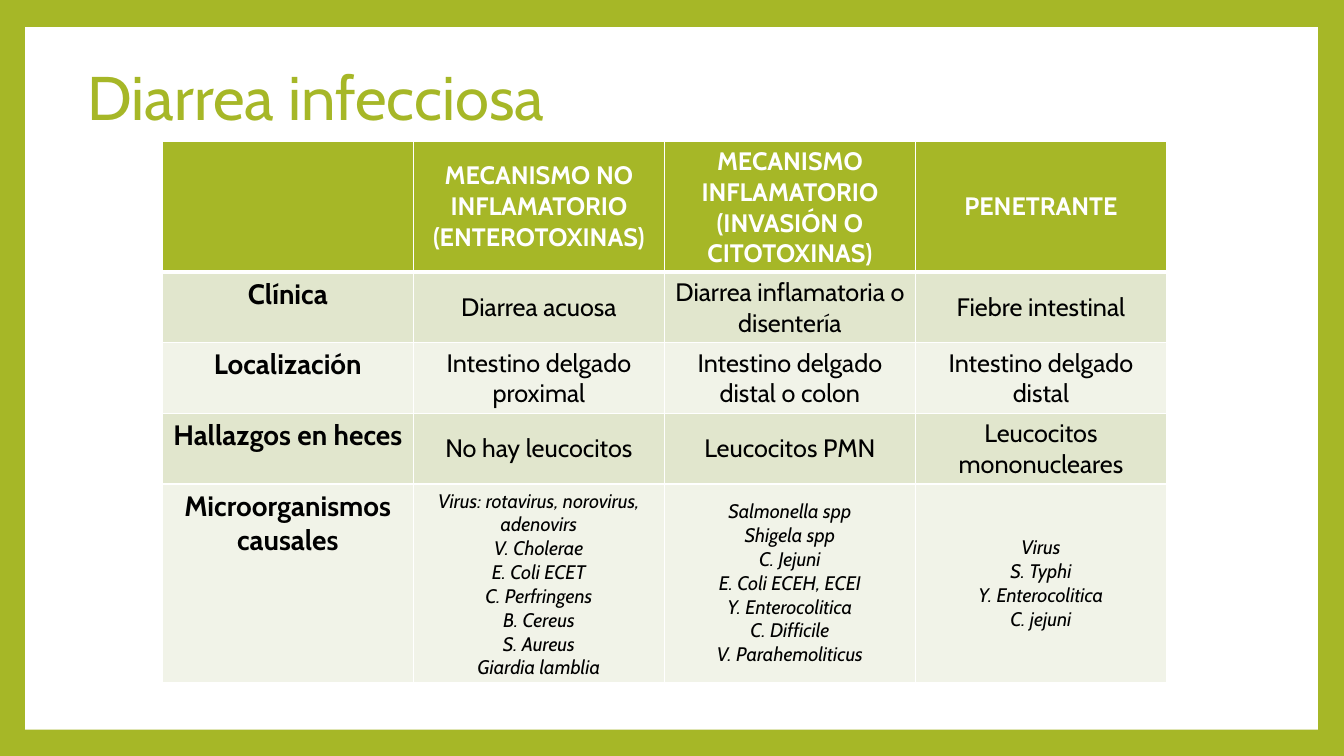
from lxml.etree import SubElement
from pptx import Presentation
from pptx.dml.color import RGBColor
from pptx.enum.shapes import MSO_SHAPE
from pptx.enum.text import MSO_ANCHOR, PP_ALIGN
from pptx.oxml.ns import qn
from pptx.util import Inches, Pt

COLORS = {"green": "A6B727", "white": "FFFFFF", "black": "000000",
          "band_dark": "E1E6CD", "band_light": "F1F3E8"}

# Text formats by role
FORMATS = {
    "title": {"size": Pt(44), "bold": False},
    "header": {"size": Pt(18), "bold": True},
    "label": {"size": Pt(20), "bold": True},
    "finding": {"size": Pt(18), "bold": False},
    "organism": {"size": Pt(14), "bold": False, "italic": True},
}

# Table content: a line break starts a new paragraph
MECHANISMS = [
    ["", "MECANISMO NO INFLAMATORIO (ENTEROTOXINAS)",
     "MECANISMO INFLAMATORIO (INVASIÓN O CITOTOXINAS)", "PENETRANTE"],
    ["Clínica", "Diarrea acuosa", "Diarrea inflamatoria o disentería",
     "Fiebre intestinal"],
    ["Localización", "Intestino delgado proximal",
     "Intestino delgado distal o colon", "Intestino delgado distal"],
    ["Hallazgos en heces", "No hay leucocitos", "Leucocitos PMN",
     "Leucocitos mononucleares"],
    ["Microorganismos causales",
     "Virus: rotavirus, norovirus, adenovirs\nV. Cholerae\nE. Coli ECET\n"
     "C. Perfringens\nB. Cereus\nS. Aureus\nGiardia lamblia",
     "Salmonella spp\nShigela spp\nC. Jejuni\nE. Coli ECEH, ECEI\n"
     "Y. Enterocolitica\nC. Difficile\nV. Parahemoliticus",
     "Virus\nS. Typhi\nY. Enterocolitica\nC. jejuni"],
]
ROW_HEIGHTS = [1.16, 0.62, 0.62, 0.62, 1.75]
COLUMN_WIDTH = 2.49


def rgb(name):
    return RGBColor.from_string(COLORS[name])


class SlideBuilder:
    def __init__(self, slide, font_name):
        self.slide = slide
        self.font_name = font_name

    def background(self, color):
        fill = self.slide.background.fill
        fill.solid()
        fill.fore_color.rgb = rgb(color)

    def panel(self, box, color):
        panel = self.slide.shapes.add_shape(MSO_SHAPE.RECTANGLE, *map(Inches, box))
        panel.shadow.inherit = False
        panel.fill.solid()
        panel.fill.fore_color.rgb = rgb(color)
        panel.line.fill.background()

    def set_text(self, frame, text, role, color, alignment):
        frame.text = text
        for paragraph in frame.paragraphs:
            paragraph.alignment = alignment
            for run in paragraph.runs:
                run.font.name = self.font_name
                run.font.color.rgb = rgb(color)
                for attribute, value in FORMATS[role].items():
                    setattr(run.font, attribute, value)

    def title(self, box, text, color):
        frame = self.slide.shapes.add_textbox(*map(Inches, box)).text_frame
        frame.word_wrap = True
        frame.vertical_anchor = MSO_ANCHOR.MIDDLE
        self.set_text(frame, text, "title", color, PP_ALIGN.LEFT)
        frame.paragraphs[0].line_spacing = 0.9

    def borders(self, cell, widths):
        properties = cell._tc.get_or_add_tcPr()
        for side, width in widths.items():
            line = SubElement(properties, qn(f"a:ln{side}"), w=str(Pt(width)))
            fill = SubElement(line, qn("a:solidFill"))
            SubElement(fill, qn("a:srgbClr"), val=COLORS["white"])

    def cell(self, cell, text, row, column):
        last_row = len(MECHANISMS) - 1
        if row == 0:
            role, color, band = "header", "white", "green"
        else:
            role = ("label" if column == 0 else
                    "organism" if row == last_row else "finding")
            color = "black"
            band = "band_dark" if row % 2 else "band_light"
        # A thick rule separates the header from the body
        self.borders(cell, {"L": 1, "R": 1, "T": 3 if row == 1 else 1,
                            "B": 3 if row == 0 else 1})
        cell.fill.solid()
        cell.fill.fore_color.rgb = rgb(band)
        cell.vertical_anchor = MSO_ANCHOR.TOP if column == 0 else MSO_ANCHOR.MIDDLE
        self.set_text(cell.text_frame, text, role, color, PP_ALIGN.CENTER)

    def table(self, left, top, content):
        columns = len(content[0])
        table = self.slide.shapes.add_table(
            len(content), columns, Inches(left), Inches(top),
            Inches(COLUMN_WIDTH * columns), Inches(sum(ROW_HEIGHTS))).table
        for table_row, height in zip(table.rows, ROW_HEIGHTS):
            table_row.height = Inches(height)
        for row, texts in enumerate(content):
            for column, text in enumerate(texts):
                self.cell(table.cell(row, column), text, row, column)


def main():
    presentation = Presentation()
    presentation.slide_width = Inches(13.33)
    presentation.slide_height = Inches(7.5)
    slide = presentation.slides.add_slide(presentation.slide_layouts[6])
    builder = SlideBuilder(slide, "Cabin")

    # Green frame around a white panel
    builder.background("green")
    builder.panel((0.25, 0.27, 12.82, 6.97), "white")

    # Title and comparison of mechanisms
    builder.title((0.77, 0.26, 10.8, 1.48), "Diarrea infecciosa", "green")
    builder.table(1.61, 1.4, MECHANISMS)

    presentation.save("out.pptx")


if __name__ == "__main__":
    main()
